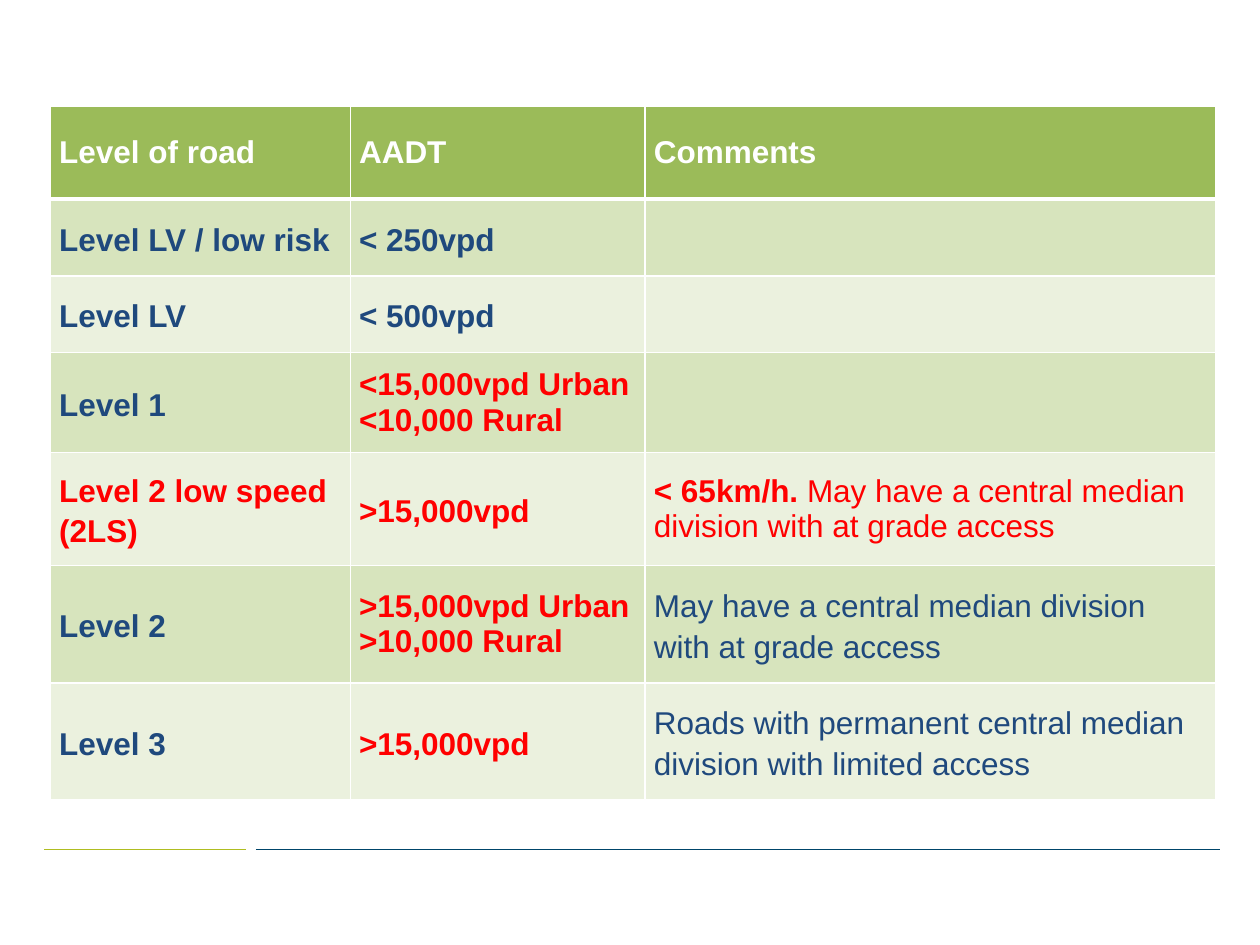
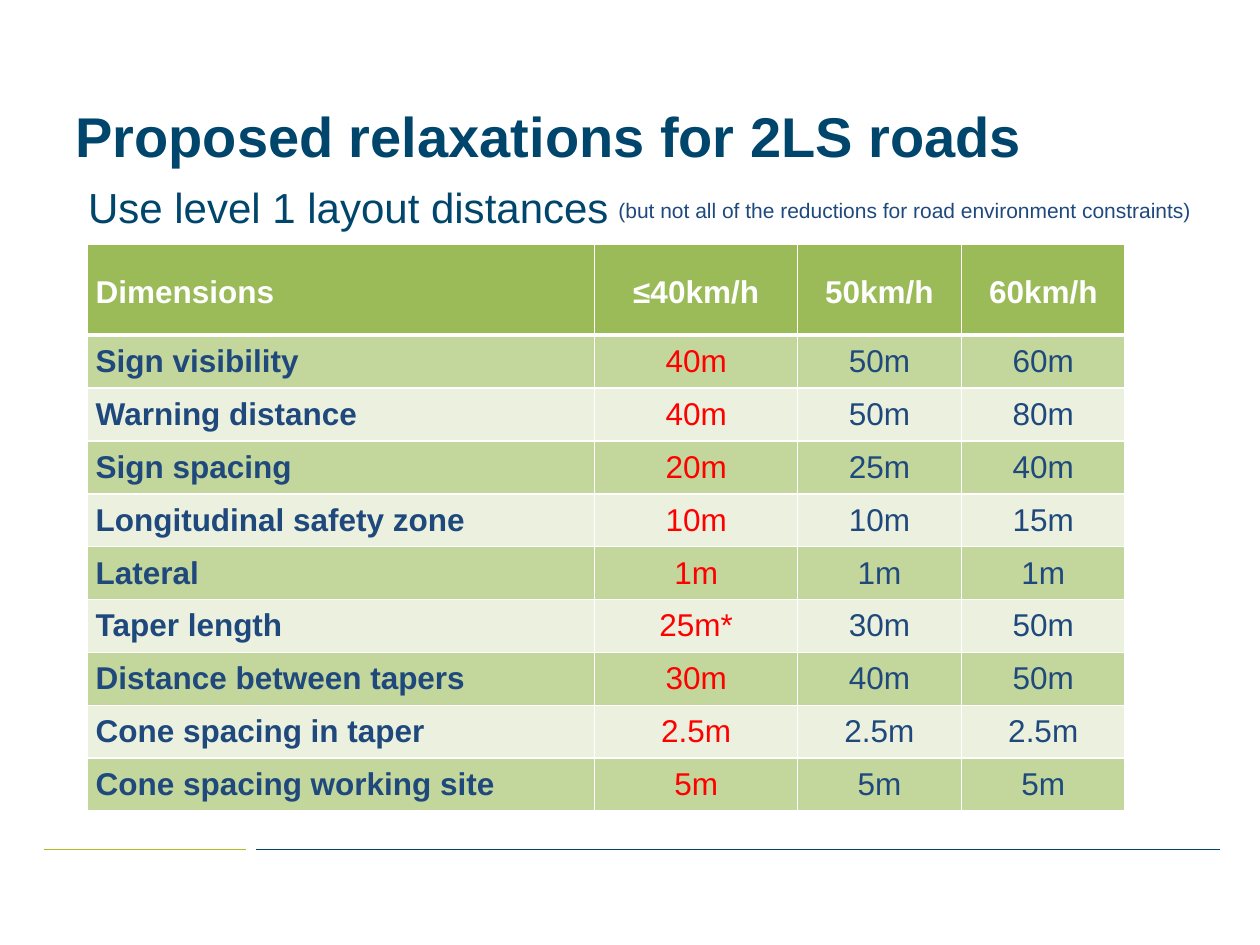
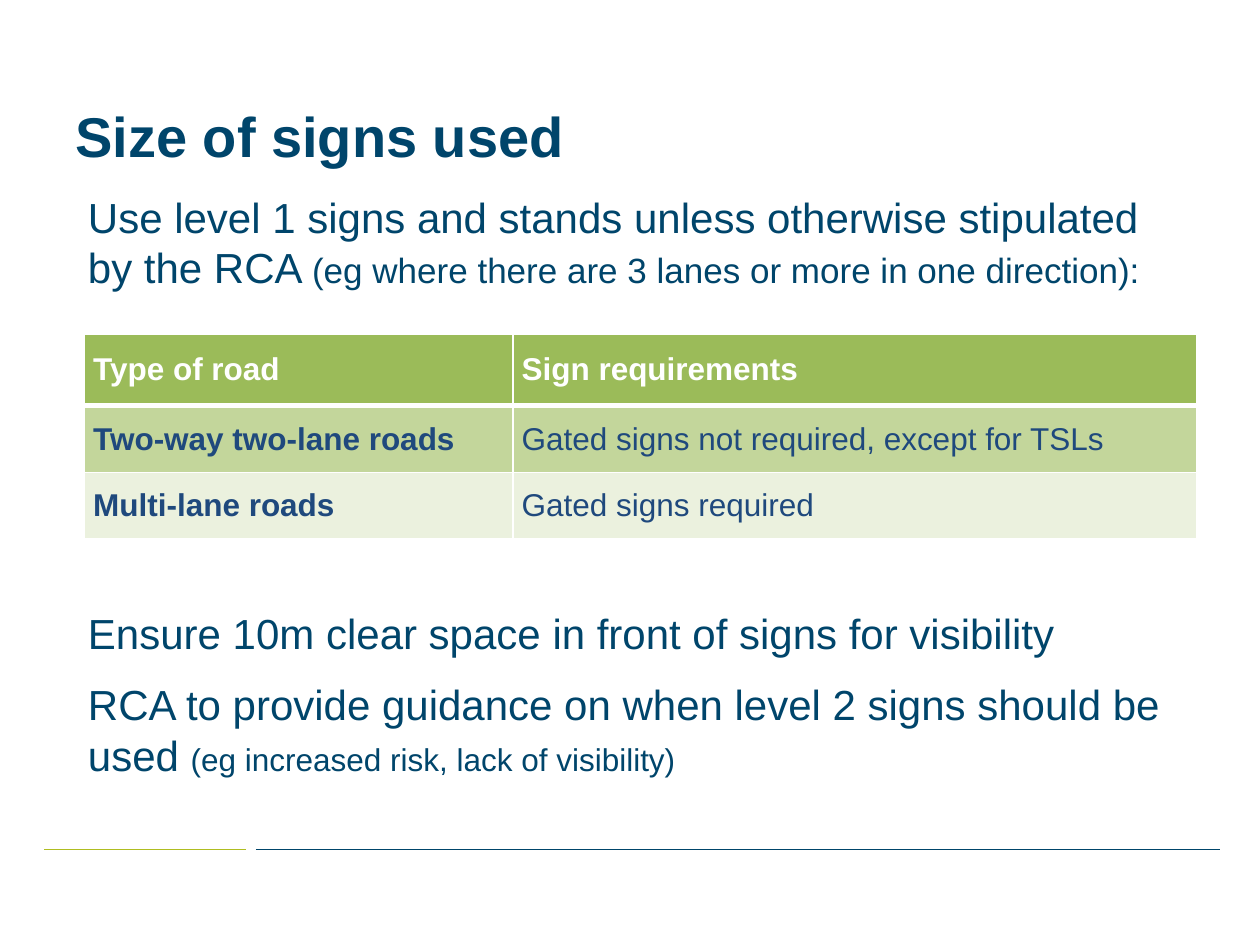
from lxml.etree import SubElement
from pptx import Presentation
from pptx.dml.color import RGBColor
from pptx.enum.shapes import MSO_CONNECTOR
from pptx.enum.text import MSO_ANCHOR, PP_ALIGN
from pptx.oxml.ns import qn
from pptx.util import Pt

PX = 9144
FONT = "Arial"
COLORS = {
    "title": "00456B", "text": "1F497D", "alert": "FF0000", "white": "FFFFFF",
    "header": "9BBB59", "strong": "C3D69B", "soft": "D7E4BD", "pale": "EBF1DE",
    "rule_green": "AFBD21", "rule_blue": "00456A",
}
STYLES = {
    "title": (32, "title", True),
    "body": (24, "title", False),
    "aside": (20, "title", False),
    "small": (18, "title", False),
    "note": (12, "text", False),
    "head": (18, "white", True),
    "label": (18, "text", True),
    "value": (18, "text", False),
    "alert": (18, "alert", False),
    "alert_label": (18, "alert", True),
}
CELL = {"margin_left": 7 * PX, "margin_right": 7 * PX, "margin_top": 0,
        "margin_bottom": 0, "vertical_anchor": MSO_ANCHOR.MIDDLE}


def color(name):
    """Return the named colour."""
    return RGBColor.from_string(COLORS[name])


def one(text, style):
    """Return a single paragraph holding a single run."""
    return [[(text, style)]]


def write(tf, paras, indent=0, gap=0, **fmt):
    """Fill a text frame with paragraphs of styled runs."""
    for i, runs in enumerate(paras):
        p = tf.add_paragraph() if i else tf.paragraphs[0]
        if indent:
            p._p.get_or_add_pPr().set("marL", str(indent * PX))
            p._p.get_or_add_pPr().set("indent", "0")
        p.space_before, p.space_after = Pt(gap if i else 0), Pt(gap)
        for name, value in fmt.items():
            setattr(p, name, value)
        for text, style in runs:
            size, ink, bold = STYLES[style]
            r = p.add_run()
            r.text = text
            font = {"name": FONT, "size": Pt(size), "bold": bold}
            for name, value in font.items():
                setattr(r.font, name, value)
            r.font.color.rgb = color(ink)


def add_text(s, box, paras, anchor=MSO_ANCHOR.TOP, **fmt):
    """Add a wrapping text box."""
    tf = s.shapes.add_textbox(*(v * PX for v in box)).text_frame
    tf.word_wrap = True
    tf.vertical_anchor = anchor
    write(tf, paras, **fmt)


def add_title(s, text):
    """Add the slide title."""
    add_text(s, (50, 60, 900, 95), one(text, "title"), MSO_ANCHOR.MIDDLE)


def add_body(s, box, paras):
    """Add indented body text."""
    add_text(s, box, paras, indent=10, gap=6)


def add_footer(s, y=674):
    """Draw the two footer rules."""
    for left, right, name in ((35, 195, "rule_green"), (203, 968, "rule_blue")):
        sp = s.shapes.add_connector(MSO_CONNECTOR.STRAIGHT, left * PX, y * PX, right * PX, y * PX)
        sp.line.color.rgb = color(name)
        sp.line.width = Pt(0.75)
        SubElement(sp._element.spPr, qn("a:effectLst"))


def set_borders(cell, top, bottom):
    """Give a cell white borders, with top and bottom widths in points."""
    tcPr = cell._tc.get_or_add_tcPr()
    for side, width in (("L", 1), ("R", 1), ("T", top), ("B", bottom)):
        ln = SubElement(tcPr, qn(f"a:ln{side}"), w=str(Pt(width)))
        fill = SubElement(ln, qn("a:solidFill"))
        SubElement(fill, qn("a:srgbClr"), val=COLORS["white"])


def add_grid(s, left, top, widths, heights, head, rows, band,
             centred=False, head_spacing=1.0, body_spacing=1.0):
    """Add a table with a header row and alternating bands."""
    frame = s.shapes.add_table(len(heights), len(widths), left * PX, top * PX,
                               sum(widths) * PX, sum(heights) * PX)
    table = frame.table
    table.first_row = table.horz_banding = False
    for col, width in zip(table.columns, widths):
        col.width = width * PX
    for row, height in zip(table.rows, heights):
        row.height = height * PX
    for i, cells in enumerate([[one(text, "head") for text in head]] + rows):
        fill = band if i % 2 else "pale"
        for j, paras in enumerate(cells):
            cell = table.cell(i, j)
            for name, value in CELL.items():
                setattr(cell, name, value)
            set_borders(cell, 3 if i == 1 else 1, 1 if i else 3)
            cell.fill.solid()
            cell.fill.fore_color.rgb = color(fill if i else "header")
            single = len(paras) == 1 and len(paras[0]) == 1
            spacing = body_spacing if i else head_spacing
            write(cell.text_frame, paras, line_spacing=spacing if single else 1.0,
                  alignment=PP_ALIGN.CENTER if centred and j else PP_ALIGN.LEFT)


def levels_slide(s):
    """Build the table of road levels."""
    median = "May have a central median division with at grade access"
    limited = "Roads with permanent central median division with limited access"
    busy = one(">15,000vpd", "alert_label")
    rows = [
        [one("Level LV / low risk", "label"), one("< 250vpd", "label"), []],
        [one("Level LV", "label"), one("< 500vpd", "label"), []],
        [one("Level 1", "label"),
         one("<15,000vpd Urban", "alert_label") + one("<10,000 Rural", "alert_label"), []],
        [one("Level 2 low speed (2LS)", "alert_label"), busy,
         [[("< 65km/h. ", "alert_label"), (median, "alert")]]],
        [one("Level 2", "label"),
         one(">15,000vpd Urban", "alert_label") + one(">10,000 Rural", "alert_label"),
         one(median, "value")],
        [one("Level 3", "label"), busy, one(limited, "value")],
    ]
    add_grid(s, 40, 84, (238, 234, 453), (74, 61, 61, 79, 90, 93, 93),
             ("Level of road", "AADT", "Comments"), rows, "soft", body_spacing=1.15)


def relaxations_slide(s):
    """Build the table of layout distances."""
    add_title(s, "Proposed relaxations for 2LS roads")
    add_body(s, (50, 139, 915, 465), one("Use level 1 layout distances", "body"))
    distances = (
        ("Sign visibility", "40m", "50m", "60m"),
        ("Warning distance", "40m", "50m", "80m"),
        ("Sign spacing", "20m", "25m", "40m"),
        ("Longitudinal safety zone", "10m", "10m", "15m"),
        ("Lateral", "1m", "1m", "1m"),
        ("Taper length", "25m*", "30m", "50m"),
        ("Distance between tapers", "30m", "40m", "50m"),
        ("Cone spacing in taper", "2.5m", "2.5m", "2.5m"),
        ("Cone spacing working site", "5m", "5m", "5m"),
    )
    styles = ("label", "alert", "value", "value")
    rows = [[one(*pair) for pair in zip(row, styles)] for row in distances]
    add_grid(s, 69, 194, (403, 161, 130, 130), [72] + [42] * len(rows),
             ("Dimensions", "≤40km/h", "50km/h", "60km/h"), rows, "strong",
             centred=True, head_spacing=1.15)
    add_text(s, (481, 152, 484, 30),
             one("(but not all of the reductions for road environment constraints)", "note"))


def signs_slide(s):
    """Build the sign size guidance."""
    add_title(s, "Size of signs used")
    add_body(s, (50, 147, 900, 102), [[
        ("Use level 1 signs and stands unless otherwise stipulated by the RCA ", "body"),
        ("(eg where there are 3 lanes or more in one direction):", "aside")]])
    rows = [[one(road, "label"), one(need, "value")] for road, need in (
        ("Two-way two-lane roads", "Gated signs not required, except for TSLs"),
        ("Multi-lane roads", "Gated signs required"))]
    add_grid(s, 67, 265, (340, 543), (57, 53, 53),
             ("Type of road", "Sign requirements"), rows, "strong")
    add_body(s, (50, 477, 900, 157), [
        [("Ensure 10m clear space in front of signs for visibility", "body")],
        [("RCA to provide guidance on when level 2 signs should be used ", "body"),
         ("(eg increased risk, lack of visibility)", "small")]])


def main():
    """Build and save the presentation."""
    prs = Presentation()
    prs.slide_width, prs.slide_height = 1000 * PX, 750 * PX
    for build in (levels_slide, relaxations_slide, signs_slide):
        s = prs.slides.add_slide(prs.slide_layouts[6])
        add_footer(s)
        build(s)
    prs.save("out.pptx")


if __name__ == "__main__":
    main()
